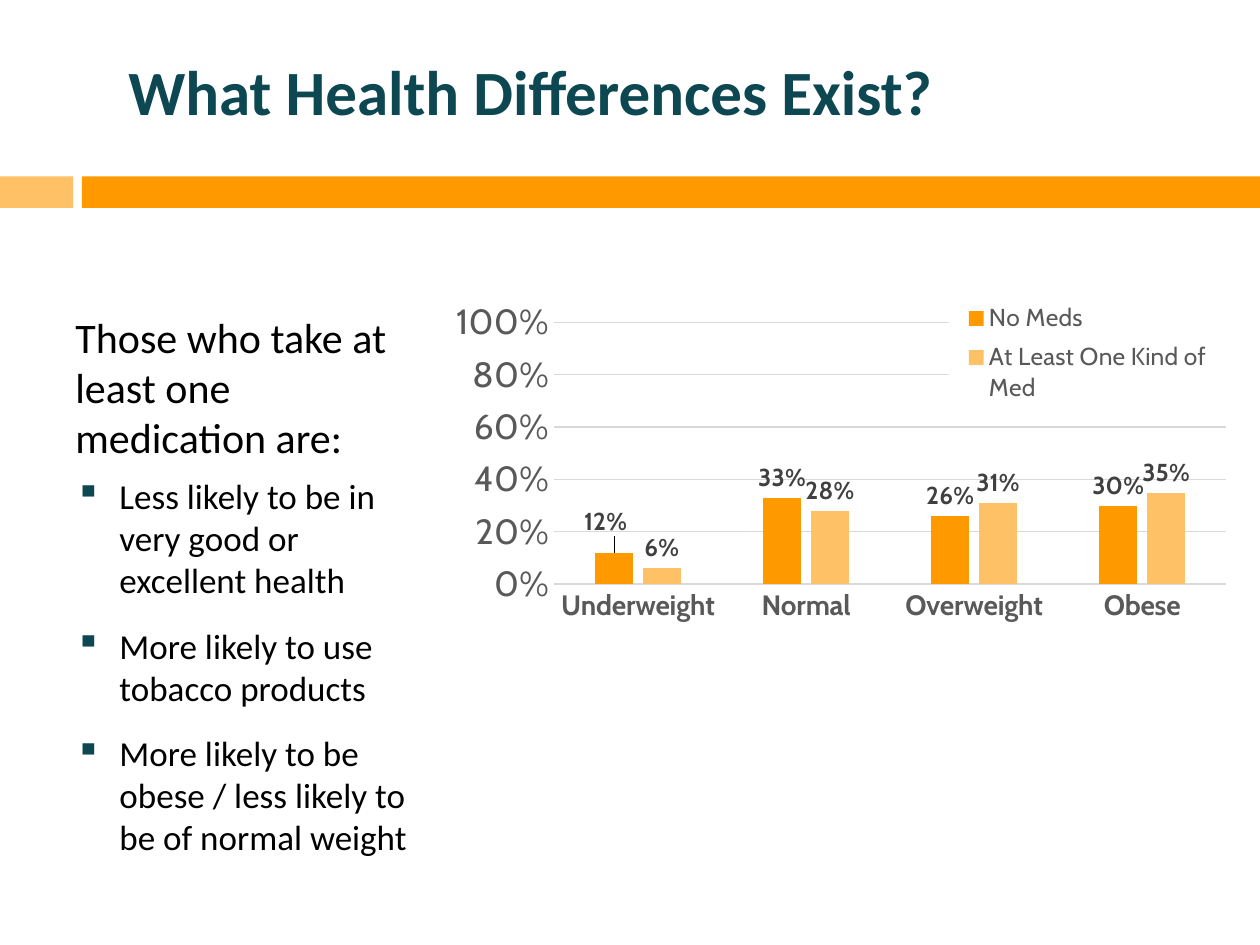
from dataclasses import dataclass

from lxml import etree
from pptx import Presentation
from pptx.chart.data import CategoryChartData
from pptx.dml.color import RGBColor
from pptx.enum.chart import XL_CHART_TYPE, XL_LABEL_POSITION, XL_LEGEND_POSITION, XL_TICK_MARK
from pptx.enum.shapes import MSO_SHAPE
from pptx.enum.text import MSO_ANCHOR
from pptx.oxml.ns import qn
from pptx.util import Inches, Pt

COLUMNS = XL_CHART_TYPE.COLUMN_CLUSTERED
OUTSIDE_END = XL_LABEL_POSITION.OUTSIDE_END
LEGEND_BOTTOM = XL_LEGEND_POSITION.BOTTOM
NO_TICK = XL_TICK_MARK.NONE
RECTANGLE = MSO_SHAPE.RECTANGLE
MIDDLE = MSO_ANCHOR.MIDDLE
TOP = MSO_ANCHOR.TOP

COLORS = {
    "orange": "FF9900", "peach": "FFC165", "teal": "0D4751", "black": "000000",
    "white": "FFFFFF", "axis": "595959", "label": "404040", "grid": "D9D9D9",
}


@dataclass
class Band:
    left: float
    width: float
    color: str


@dataclass
class Line:
    text: str
    size: int = 20
    color: str = "black"
    bold: bool = False
    before: float = 0
    bullet: bool = False


@dataclass
class Group:
    name: str
    values: tuple[float, ...]
    color: str


BANDS = [Band(0, 0.58, "peach"), Band(0.65, 9.35, "orange")]
TITLE = [Line("What Health Differences Exist?", 36, "teal", True)]
BODY = [
    Line("Those who take at least one medication are:", 24, before=7),
    Line("Less likely to be in very good or excellent health", before=7, bullet=True),
    Line("More likely to use tobacco products", before=13.5, bullet=True),
    Line("More likely to be obese / less likely to be of normal weight", before=13.5, bullet=True),
]
CATEGORIES = ["Underweight", "Normal", "Overweight", "Obese"]
GROUPS = [
    Group("No Meds", (0.12, 0.33, 0.26, 0.30), "orange"),
    Group("At Least One Kind of Med", (0.06, 0.28, 0.31, 0.35), "peach"),
]


def rgb(name: str) -> RGBColor:
    return RGBColor.from_string(COLORS[name])


def apply(target, values: dict) -> None:
    for name, value in values.items():
        setattr(target, name, value)


def style_font(font, name: str, size: int, color: str, bold: bool = False) -> None:
    apply(font, {"name": name, "size": Pt(size), "bold": bold})
    font.color.rgb = rgb(color)


def draw_band(page, band: Band) -> None:
    box = page.shapes.add_shape(
        RECTANGLE, Inches(band.left), Inches(1.4), Inches(band.width), Inches(0.25))
    box.shadow.inherit = False
    box.fill.solid()
    box.fill.fore_color.rgb = rgb(band.color)
    box.line.fill.background()


def add_bullet(para) -> None:
    properties = para._p.get_or_add_pPr()
    apply_indent = {"marL": Inches(0.35), "indent": Inches(-0.35)}
    for name, value in apply_indent.items():
        properties.set(name, str(value))
    color = etree.SubElement(properties, qn("a:buClr"))
    etree.SubElement(color, qn("a:srgbClr")).set("val", COLORS["teal"])
    etree.SubElement(properties, qn("a:buChar")).set("char", "▪")


def draw_text(page, at: tuple[float, ...], lines: list[Line], anchor) -> None:
    box = page.shapes.add_textbox(*map(Inches, at))
    frame = box.text_frame
    apply(frame, {"word_wrap": True, "vertical_anchor": anchor})
    for index, line in enumerate(lines):
        para = frame.add_paragraph() if index else frame.paragraphs[0]
        para.space_before = Pt(line.before)
        if line.bullet:
            add_bullet(para)
        span = para.add_run()
        span.text = line.text
        style_font(span.font, "Calibri", line.size, line.color, line.bold)


def set_layout(parent, index: int, values: dict) -> None:
    """Place a chart part by hand, in fractions of the chart."""
    for old in parent.findall(qn("c:layout")):
        parent.remove(old)
    layout = etree.Element(qn("c:layout"))
    manual = etree.SubElement(layout, qn("c:manualLayout"))
    for name, value in values.items():
        etree.SubElement(manual, qn(f"c:{name}")).set("val", str(value))
    parent.insert(index, layout)


def style_axes(chart) -> None:
    category, value = chart.category_axis, chart.value_axis
    for axis in (category, value):
        apply(axis, {"major_tick_mark": NO_TICK, "minor_tick_mark": NO_TICK})
    apply(value, {"minimum_scale": 0, "maximum_scale": 1, "major_unit": 0.2})
    apply(value.tick_labels, {"number_format": "0%", "number_format_is_linked": False})
    style_font(category.tick_labels.font, "Cabin", 16, "axis", True)
    style_font(value.tick_labels.font, "Cabin", 20, "axis")
    value.format.line.fill.background()
    for line in (category.format.line, value.major_gridlines.format.line):
        line.color.rgb = rgb("grid")
        line.width = Pt(0.75)


def style_series(series, group: Group) -> None:
    series.format.fill.solid()
    series.format.fill.fore_color.rgb = rgb(group.color)
    labels = series.data_labels
    apply(labels, {"show_value": True, "number_format": "0%",
                   "number_format_is_linked": False, "position": OUTSIDE_END})
    style_font(labels.font, "Cabin", 14, "label", True)


def shift_label(series, point: int, x: float, y: float) -> None:
    label = series.points[point].data_label
    style_font(label.font, "Cabin", 14, "label", True)
    label.position = OUTSIDE_END
    element = series.data_labels._element.find(qn("c:dLbl"))
    set_layout(element, 1, {"x": x, "y": y})
    number = etree.Element(qn("c:numFmt"), formatCode="0%", sourceLinked="0")
    element.insert(2, number)


def style_legend(chart) -> None:
    chart.has_legend = True
    legend = chart.legend
    apply(legend, {"position": LEGEND_BOTTOM, "include_in_layout": True})
    style_font(legend.font, "Cabin", 14, "axis")
    element = legend._element
    set_layout(element, 1, {"xMode": "edge", "yMode": "edge",
                            "x": 0.63, "y": 0.02, "w": 0.33, "h": 0.21})
    # White backing hides the gridlines behind the legend
    properties = etree.Element(qn("c:spPr"))
    fill = etree.SubElement(properties, qn("a:solidFill"))
    etree.SubElement(fill, qn("a:srgbClr")).set("val", COLORS["white"])
    element.find(qn("c:txPr")).addprevious(properties)


def draw_chart(page) -> None:
    data = CategoryChartData(number_format="0%")
    data.categories = CATEGORIES
    for group in GROUPS:
        data.add_series(group.name, group.values)
    at = map(Inches, (3.33, 2.25, 6.67, 4.42))
    chart = page.shapes.add_chart(COLUMNS, *at, data).chart
    chart.has_title = False
    style_font(chart.font, "Cabin", 10, "black")
    plot = chart.plots[0]
    apply(plot, {"gap_width": 219, "overlap": -27, "vary_by_categories": False})
    for series, group in zip(plot.series, GROUPS):
        style_series(series, group)
    shift_label(plot.series[0], 0, -0.01, -0.02)
    style_axes(chart)
    style_legend(chart)
    area = chart._chartSpace.chart.plotArea
    set_layout(area, 0, {"layoutTarget": "inner", "xMode": "edge", "yMode": "edge",
                         "x": 0.16, "y": 0.07, "w": 0.8, "h": 0.47})


def main() -> None:
    deck = Presentation()
    apply(deck, {"slide_width": Inches(10), "slide_height": Inches(7.5)})
    page = deck.slides.add_slide(deck.slide_layouts[6])
    # Divider bands
    for band in BANDS:
        draw_band(page, band)
    # Title and findings
    draw_text(page, (0.92, 0.31, 6.69, 0.81), TITLE, MIDDLE)
    draw_text(page, (0.5, 2.42, 3, 3.62), BODY, TOP)
    # Weight classes by medication use
    draw_chart(page)
    deck.save("out.pptx")


if __name__ == "__main__":
    main()
